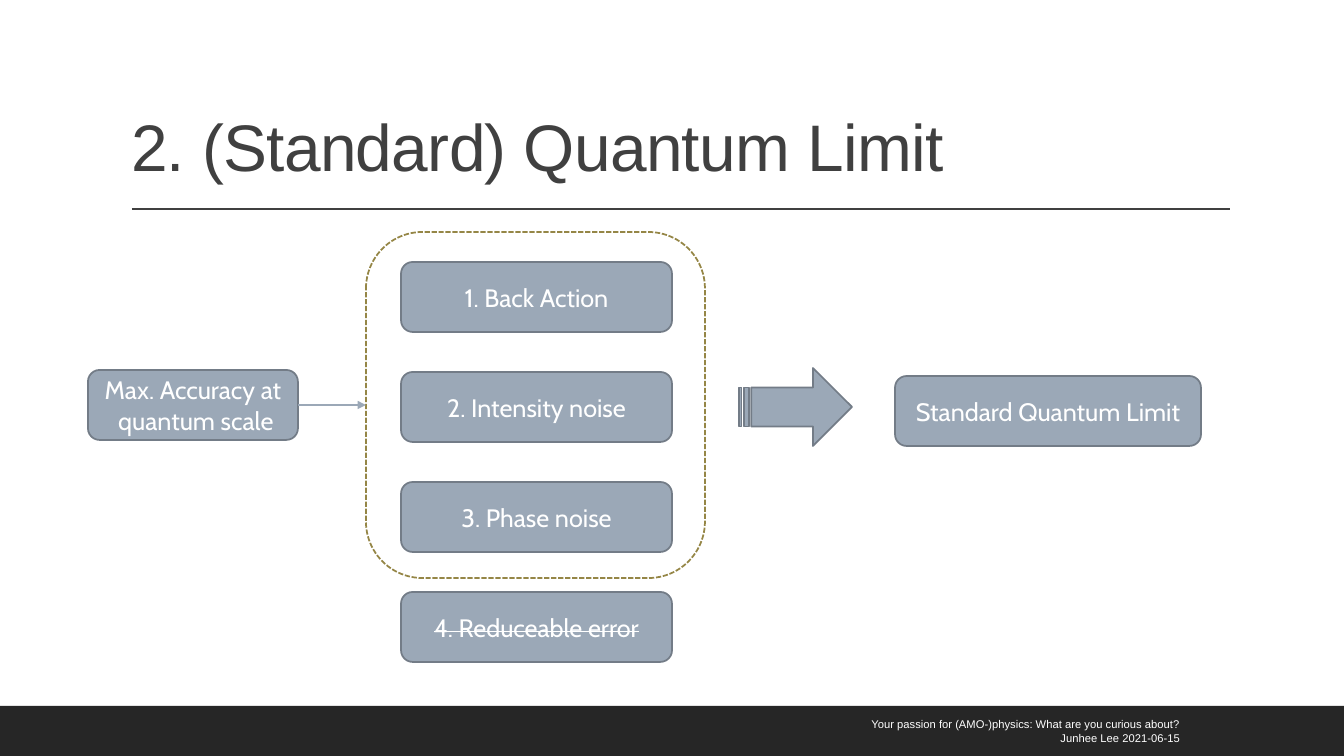
from dataclasses import dataclass

from lxml.etree import SubElement
from pptx import Presentation
from pptx.dml.color import RGBColor
from pptx.enum.dml import MSO_LINE as Dash
from pptx.enum.shapes import MSO_CONNECTOR as Link, MSO_SHAPE as Kind
from pptx.enum.text import MSO_ANCHOR as Anchor, MSO_AUTO_SIZE as Fit, PP_ALIGN as Align
from pptx.oxml.ns import qn
from pptx.shapes.autoshape import Shape
from pptx.shapes.connector import Connector
from pptx.slide import Slide
from pptx.text.text import TextFrame
from pptx.util import Emu, Pt

COLORS = {
    "bar": "262626",
    "ink": "404040",
    "box": "9BA8B7",
    "edge": "737C87",
    "dash": "958646",
    "white": "FFFFFF",
}
SCALE = 914400 / 100.8


@dataclass(frozen=True)
class Area:
    left: int
    top: int
    width: int
    height: int


@dataclass(frozen=True)
class Box:
    text: str
    area: Area
    strike: bool = False


NOISE = ["1. Back Action", "2. Intensity noise", "3. Phase noise", "4. Reduceable error"]
STEP = 110
START = Box("Max. Accuracy at\n quantum scale", Area(88, 370, 210, 70))
RESULT = Box("Standard Quantum Limit", Area(895, 376, 306, 70))
STACK = [
    Box(text, Area(401, 262 + row * STEP, 271, 70), strike=text == NOISE[-1])
    for row, text in enumerate(NOISE)
]
FRAME = Area(366, 232, 339, 346)
ARROW = Area(739, 368, 113, 78)


def px(count: int) -> Emu:
    return Emu(round(count * SCALE))


def rgb(name: str) -> RGBColor:
    return RGBColor.from_string(COLORS[name])


def spread(area: Area) -> tuple[Emu, Emu, Emu, Emu]:
    return px(area.left), px(area.top), px(area.width), px(area.height)


def write(
    frame: TextFrame,
    text: str,
    *,
    size: float,
    font: str,
    color: str = "white",
    align: Align = Align.CENTER,
    anchor: Anchor = Anchor.MIDDLE,
    strike: bool = False,
    track: int = 0,
    line: float = 1.0,
) -> None:
    frame.word_wrap = True
    frame.auto_size = Fit.NONE
    frame.vertical_anchor = anchor
    frame.text = text
    for para in frame.paragraphs:
        para.alignment = align
        para.line_spacing = line
        for run in para.runs:
            run.font.name = font
            run.font.size = Pt(size)
            run.font.color.rgb = rgb(color)
            props = run.font._element
            if strike:
                props.set("strike", "sngStrike")
            if track:
                props.set("spc", str(track))


def draw(
    slide: Slide,
    kind: Kind,
    area: Area,
    fill: str | None = "box",
    edge: str | None = "edge",
) -> Shape:
    shape = slide.shapes.add_shape(kind, *spread(area))
    shape.shadow.inherit = False
    if fill:
        shape.fill.solid()
        shape.fill.fore_color.rgb = rgb(fill)
    else:
        shape.fill.background()
    if edge:
        shape.line.color.rgb = rgb(edge)
        shape.line.width = Pt(1.25)
    else:
        shape.line.fill.background()
    return shape


def label(slide: Slide, box: Box) -> Shape:
    shape = draw(slide, Kind.ROUNDED_RECTANGLE, box.area)
    write(shape.text_frame, box.text, size=18, font="Cabin", strike=box.strike)
    return shape


def rule(slide: Slide, left: int, right: int, top: int, color: str) -> Connector:
    line = slide.shapes.add_connector(Link.STRAIGHT, px(left), px(top), px(right), px(top))
    line.line.color.rgb = rgb(color)
    line.line.width = Pt(1)
    SubElement(line._element.spPr, qn("a:effectLst"))
    return line


def join(slide: Slide, start: Shape, end: Shape) -> None:
    link = rule(slide, 298, 366, 405, "box")
    link.begin_connect(start, 3)
    link.end_connect(end, 1)
    SubElement(link.line._get_or_add_ln(), qn("a:tailEnd"), type="triangle")


def main() -> None:
    deck = Presentation()
    deck.slide_width, deck.slide_height = px(1344), px(756)
    slide = deck.slides.add_slide(deck.slide_layouts[5])

    draw(slide, Kind.RECTANGLE, Area(0, 706, 1344, 50), fill="bar", edge=None)
    rule(slide, 132, 1230, 209, "ink")

    title = slide.shapes.title
    title.left, title.top, title.width, title.height = spread(Area(121, 31, 1109, 160))
    write(
        title.text_frame,
        "2. (Standard) Quantum Limit",
        size=47,
        font="Arial",
        color="ink",
        align=Align.LEFT,
        anchor=Anchor.BOTTOM,
        track=-50,
        line=0.9,
    )

    start = label(slide, START)
    frame = draw(slide, Kind.ROUNDED_RECTANGLE, FRAME, fill=None, edge="dash")
    frame.line.dash_style = Dash.SQUARE_DOT
    for box in STACK:
        label(slide, box)
    join(slide, start, frame)
    draw(slide, Kind.STRIPED_RIGHT_ARROW, ARROW)
    label(slide, RESULT)

    note = slide.shapes.add_textbox(*spread(Area(861, 711, 329, 40)))
    write(
        note.text_frame,
        "Your passion for (AMO-)physics: What are you curious about?\nJunhee Lee 2021-06-15",
        size=8,
        font="Arial",
        align=Align.RIGHT,
    )

    deck.save("out.pptx")


if __name__ == "__main__":
    main()
